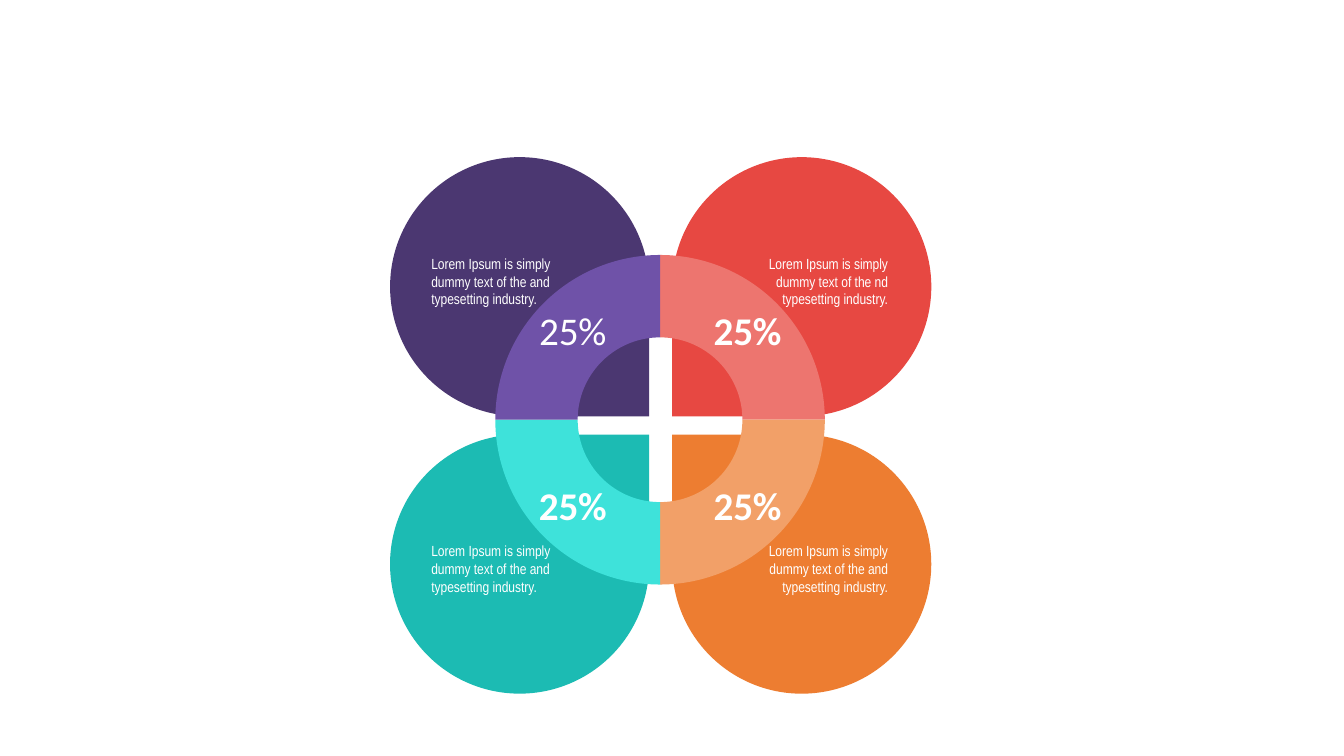
"""Build a slide with four petals around a doughnut chart of equal shares."""
from dataclasses import dataclass

from lxml.etree import fromstring
from pptx import Presentation
from pptx.chart.data import CategoryChartData
from pptx.dml.color import RGBColor
from pptx.enum.chart import XL_CHART_TYPE
from pptx.enum.shapes import MSO_SHAPE
from pptx.enum.text import MSO_AUTO_SIZE, PP_ALIGN
from pptx.oxml.ns import nsdecls, qn
from pptx.util import Cm, Pt


@dataclass(frozen=True)
class Theme:
    """Hold the colours, fonts and type sizes of the slide."""
    petals: tuple = ("E74842", "ED7D31", "1CBBB3", "4B3771")
    shares: tuple = ("ED756F", "F2A068", "3EE2DA", "6F52A8")
    white: str = "FFFFFF"
    black: str = "000000"
    body_font: str = "Arial Narrow"
    chart_font: str = "Calibri"
    body_size: float = 10.5
    chart_size: float = 18
    label_size: float = 28


THEME = Theme()
BODY = "Lorem Ipsum is simply dummy text of the and typesetting industry."
BODY_TOP_RIGHT = "Lorem Ipsum is simply dummy text of the nd typesetting industry."
PETAL_SIZE = 6.53
LEFT, RIGHT = 9.83, 16.94
TOP, BOTTOM = 3.96, 10.95
TEXT_LEFT, TEXT_RIGHT = 10.62, 18.13
TEXT_TOP, TEXT_BOTTOM = 6.3, 13.54
QUADRANTS = (
    (RIGHT, TOP, 180, TEXT_RIGHT, TEXT_TOP, PP_ALIGN.RIGHT, BODY_TOP_RIGHT),
    (RIGHT, BOTTOM, 270, TEXT_RIGHT, TEXT_BOTTOM, PP_ALIGN.RIGHT, BODY),
    (LEFT, BOTTOM, 0, TEXT_LEFT, TEXT_BOTTOM, PP_ALIGN.LEFT, BODY),
    (LEFT, TOP, 90, TEXT_LEFT, TEXT_TOP, PP_ALIGN.LEFT, BODY),
)


def style_font(font, name, size, color, bold=False):
    """Set the face, size, colour and weight of a font."""
    font.name, font.size, font.bold = name, Pt(size), bold
    font.color.rgb = RGBColor.from_string(color)


def add_petal(page, left, top, rotation, color):
    """Add a teardrop whose tip points to the centre of the flower."""
    petal = page.shapes.add_shape(
        MSO_SHAPE.TEAR, Cm(left), Cm(top), Cm(PETAL_SIZE), Cm(PETAL_SIZE))
    petal.rotation = rotation
    petal.shadow.inherit = False
    petal.fill.solid()
    petal.fill.fore_color.rgb = RGBColor.from_string(color)
    petal.line.fill.background()


def add_text(page, text, *, left, top, align):
    """Add a wrapped text box for one petal."""
    box = page.shapes.add_textbox(Cm(left), Cm(top), Cm(4.5), Cm(1.6))
    box.text_frame.word_wrap = True
    box.text_frame.auto_size = MSO_AUTO_SIZE.SHAPE_TO_FIT_TEXT
    para = box.text_frame.paragraphs[0]
    para.alignment = align
    span = para.add_run()
    span.text = text
    style_font(span.font, THEME.body_font, THEME.body_size, THEME.white)


def clear_background(chart):
    """Make the chart area transparent and without a border."""
    area = fromstring(f'<c:spPr {nsdecls("c", "a")}><a:noFill/>'
                      '<a:ln><a:noFill/></a:ln></c:spPr>')
    chart.element.find(qn("c:chart")).addnext(area)


def place_ring(chart, width, height):
    """Centre the ring in the chart at the given fractions of its size."""
    plot_area = chart.element.find(f'{qn("c:chart")}/{qn("c:plotArea")}')
    for layout in plot_area.findall(qn("c:layout")):
        plot_area.remove(layout)
    values = {"x": (1 - width) / 2, "y": (1 - height) / 2, "w": width, "h": height}
    parts = "".join(f'<c:{key} val="{value:.4f}"/>' for key, value in values.items())
    plot_area.insert(0, fromstring(
        f'<c:layout {nsdecls("c")}><c:manualLayout><c:layoutTarget val="inner"/>'
        f'<c:xMode val="edge"/><c:yMode val="edge"/>{parts}'
        '</c:manualLayout></c:layout>'))


def add_ring(page):
    """Add the doughnut chart with its four share labels."""
    data = CategoryChartData(number_format="0%")
    data.categories = ["1", "2", "3", "4"]
    data.add_series("Series 1", [0.25] * 4)
    chart = page.shapes.add_chart(XL_CHART_TYPE.DOUGHNUT, Cm(9.5), Cm(5.82),
                                  Cm(14.27), Cm(9.52), data).chart
    chart.has_legend = chart.has_title = False
    style_font(chart.font, THEME.chart_font, THEME.chart_size, THEME.black)
    clear_background(chart)
    place_ring(chart, 0.582, 0.873)

    plot = chart.plots[0]
    plot.vary_by_categories = True
    plot._element.find(qn("c:holeSize")).set("val", "36")
    series = plot.series[0]
    for index, color in enumerate(THEME.shares):
        part = series.points[index].format
        part.fill.solid()
        part.fill.fore_color.rgb = RGBColor.from_string(color)
        part.line.fill.background()
    labels = series.data_labels
    labels.show_value, labels.show_percentage = True, False
    labels.number_format, labels.number_format_is_linked = "0%", False
    style_font(labels.font, THEME.chart_font, THEME.label_size, THEME.white, bold=True)
    span = series.points[3].data_label.text_frame.paragraphs[0].add_run()
    span.text = "25%"
    style_font(span.font, THEME.chart_font, THEME.label_size, THEME.white)


def main():
    """Build and save the deck."""
    deck = Presentation()
    deck.slide_width, deck.slide_height = Cm(33.87), Cm(19.05)
    page = deck.slides.add_slide(deck.slide_layouts[6])
    for (left, top, rotation, *_), color in zip(QUADRANTS, THEME.petals):
        add_petal(page, left, top, rotation, color)
    add_ring(page)
    for *_, left, top, align, text in QUADRANTS:
        add_text(page, text, left=left, top=top, align=align)
    deck.save("out.pptx")


if __name__ == "__main__":
    main()
